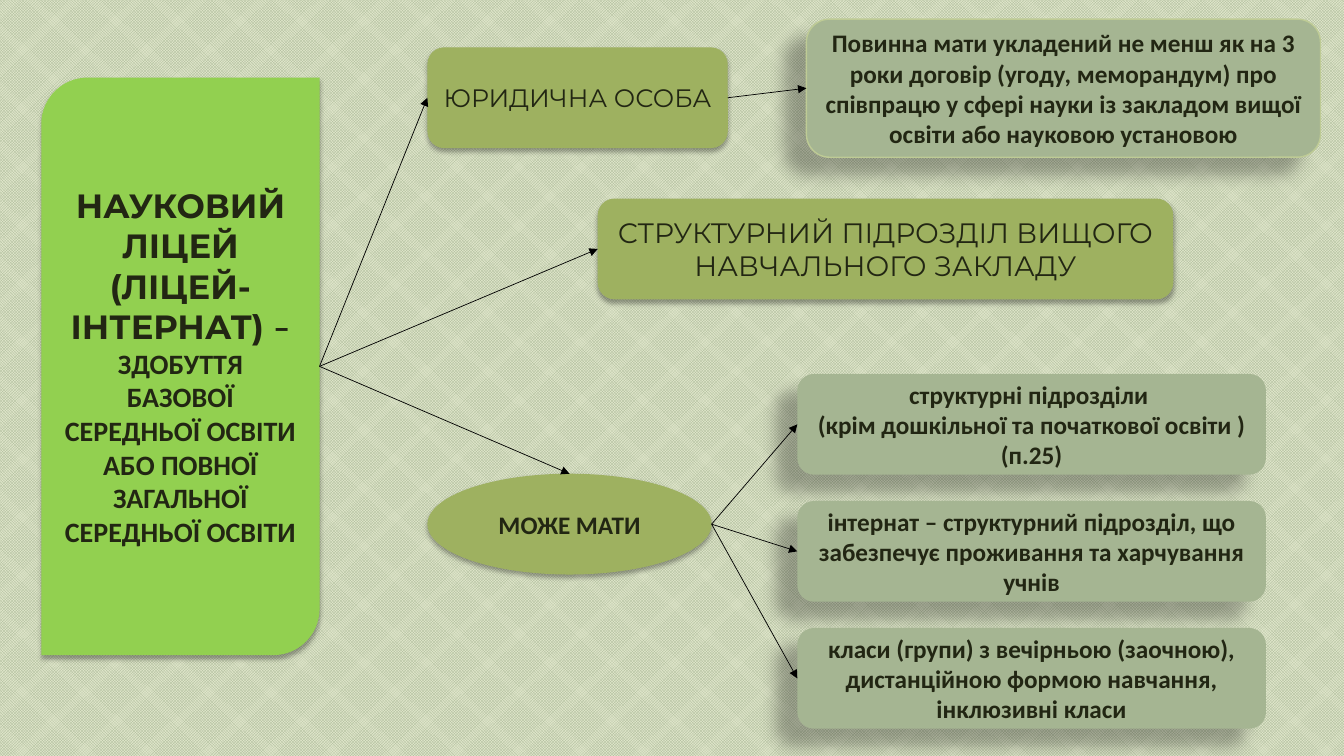
from dataclasses import dataclass

import pptx
import pptx.util
from lxml import etree
from pptx.dml.color import RGBColor
from pptx.enum.dml import MSO_PATTERN
from pptx.enum.shapes import MSO_CONNECTOR, MSO_SHAPE
from pptx.enum.text import MSO_ANCHOR, PP_ALIGN
from pptx.oxml.ns import qn

COLS, ROWS = 160, 90
WIDTH, HEIGHT = pptx.util.Inches(13.33), pptx.util.Inches(7.5)
TOP, LEFT, RIGHT = 0, 1, 3


@dataclass(frozen=True)
class Theme:
    ink: str = "222613"
    panel: str = "92D050"
    olive: str = "9EB160"
    sage: str = "A5B592"
    rim: str = "BECB95"
    paper: str = "DFE5CA"
    arrow: str = "000000"
    head: str = "Montserrat"
    body: str = "Calibri"
    big: int = 24
    medium: int = 20
    small: int = 18
    # blur, distance (points), direction (degrees), opacity (percent)
    tight_shadow: tuple = (3.5, 2.2, 90, 32)
    deep_shadow: tuple = (11.8, 19.7, 141, 28)


THEME = Theme()


@dataclass(frozen=True)
class Box:
    """An area in grid columns and rows."""
    x: float
    y: float
    w: float
    h: float

    def inner(self, x, y, w, h):
        return Box(self.x + x, self.y + y, w, h)

    def emu(self):
        return (round(self.x * WIDTH / COLS), round(self.y * HEIGHT / ROWS),
                round(self.w * WIDTH / COLS), round(self.h * HEIGHT / ROWS))


def rgb(value):
    return RGBColor.from_string(value)


def add_text(p, text, font=THEME.body, size=THEME.small, bold=True):
    p.alignment = PP_ALIGN.CENTER
    r = p.add_run()
    r.text = text
    r.font.name, r.font.size, r.font.bold = font, pptx.util.Pt(size), bold
    r.font.color.rgb = rgb(THEME.ink)


def add_shadow(sp, blur, distance, direction, opacity):
    sp.shadow.inherit = False
    effects = sp._element.spPr.find(qn("a:effectLst"))
    outer = etree.SubElement(
        effects, qn("a:outerShdw"), blurRad=str(pptx.util.Pt(blur)),
        dist=str(pptx.util.Pt(distance)), dir=str(direction * 60000),
        algn="ctr", rotWithShape="0")
    color = etree.SubElement(outer, qn("a:srgbClr"), val="000000")
    etree.SubElement(color, qn("a:alpha"), val=str(opacity * 1000))


def add_block(slide, box, kind=MSO_SHAPE.ROUNDED_RECTANGLE, fill=THEME.olive,
              shadow=THEME.tight_shadow, rim=None):
    sp = slide.shapes.add_shape(kind, *box.emu())
    sp.fill.solid()
    sp.fill.fore_color.rgb = rgb(fill)
    if rim:
        sp.line.color.rgb = rgb(rim)
        sp.line.width = pptx.util.Pt(1)
    else:
        sp.line.fill.background()
    add_shadow(sp, *shadow)
    sp.text_frame.word_wrap = True
    sp.text_frame.vertical_anchor = MSO_ANCHOR.MIDDLE
    return sp


def add_note(slide, box, *lines, rim=None):
    sp = add_block(slide, box, fill=THEME.sage, shadow=THEME.deep_shadow, rim=rim)
    tf = sp.text_frame
    for i, line in enumerate(lines):
        add_text(tf.add_paragraph() if i else tf.paragraphs[0], line)
    return sp


def add_arrow(slide, source, target, side=LEFT, glue_source=False):
    """Arrow from the right side of source to the given side of target."""
    start = source.left + source.width, source.top + source.height // 2
    line = slide.shapes.add_connector(MSO_CONNECTOR.STRAIGHT, *start, *start)
    if glue_source:
        line.begin_connect(source, RIGHT)
    line.end_connect(target, side)
    line.line.color.rgb = rgb(THEME.arrow)
    line.line.width = pptx.util.Pt(0.5)
    spPr = line._element.spPr
    etree.SubElement(spPr.find(qn("a:ln")), qn("a:tailEnd"), type="triangle")
    etree.SubElement(spPr, qn("a:effectLst"))


def draw_lyceum(slide, box):
    sp = add_block(slide, box, MSO_SHAPE.ROUND_2_DIAG_RECTANGLE, THEME.panel)
    p = sp.text_frame.paragraphs[0]
    add_text(p, "НАУКОВИЙ ЛІЦЕЙ (ЛІЦЕЙ-ІНТЕРНАТ) ", font=THEME.head, size=THEME.big)
    add_text(p, "– ", size=THEME.big)
    add_text(p, "ЗДОБУТТЯ БАЗОВОЇ СЕРЕДНЬОЇ ОСВІТИ АБО ПОВНОЇ ЗАГАЛЬНОЇ "
                "СЕРЕДНЬОЇ ОСВІТИ ", size=THEME.medium)
    return sp


def draw_legal_entity(slide, box):
    entity = add_block(slide, box.inner(0, 3.36, 35.76, 12))
    add_text(entity.text_frame.paragraphs[0], "ЮРИДИЧНА ОСОБА",
             font=THEME.head, bold=False)
    duty = add_note(
        slide, box.inner(box.w - 61.2, 0, 61.2, box.h),
        "Повинна мати укладений не менш як на 3 роки договір (угоду, меморандум) "
        "про співпрацю у сфері науки із закладом вищої освіти або науковою установою",
        rim=THEME.rim)
    add_arrow(slide, entity, duty, glue_source=True)
    return entity


def draw_subdivision(slide, box):
    sp = add_block(slide, box)
    add_text(sp.text_frame.paragraphs[0],
             "СТРУКТУРНИЙ ПІДРОЗДІЛ ВИЩОГО НАВЧАЛЬНОГО ЗАКЛАДУ",
             font=THEME.head, size=THEME.medium, bold=False)
    return sp


def draw_options(slide, box):
    """Oval on the left, pointing to equal notes stacked on the right."""
    row_h, note_w = 12, 55.8
    oval = add_block(slide, box.inner(0, 11.88, 33.84, row_h), MSO_SHAPE.OVAL)
    add_text(oval.text_frame.paragraphs[0], "МОЖЕ МАТИ")
    notes = [
        ("структурні підрозділи ", "(крім дошкільної та початкової освіти ) (п.25)"),
        ("інтернат – структурний підрозділ, що забезпечує проживання та "
         "харчування учнів",),
        ("класи (групи) з вечірньою (заочною), дистанційною формою навчання, "
         "інклюзивні класи",),
    ]
    pitch = (box.h - row_h) / (len(notes) - 1)
    for i, lines in enumerate(notes):
        note = add_note(slide, box.inner(box.w - note_w, i * pitch, note_w, row_h), *lines)
        add_arrow(slide, oval, note)
    return oval


def draw_lyceum_slide(prs):
    slide = prs.slides.add_slide(prs.slide_layouts[6])
    fill = slide.background.fill
    fill.patterned()
    fill.pattern = MSO_PATTERN.SMALL_CHECKER_BOARD
    fill.fore_color.rgb = rgb(THEME.sage)
    fill.back_color.rgb = rgb(THEME.paper)

    lyceum = draw_lyceum(slide, Box(4.92, 9.24, 33.12, 68.76))
    entity = draw_legal_entity(slide, Box(50.88, 2.28, 106.32, 16.44))
    subdivision = draw_subdivision(slide, Box(71.16, 23.64, 68.52, 12))
    options = draw_options(slide, Box(50.88, 44.52, 99.84, 42.24))
    for target, side in ((entity, LEFT), (subdivision, LEFT), (options, TOP)):
        add_arrow(slide, lyceum, target, side)


def main():
    prs = pptx.Presentation()
    prs.slide_width, prs.slide_height = WIDTH, HEIGHT
    draw_lyceum_slide(prs)
    prs.save("out.pptx")


if __name__ == "__main__":
    main()
